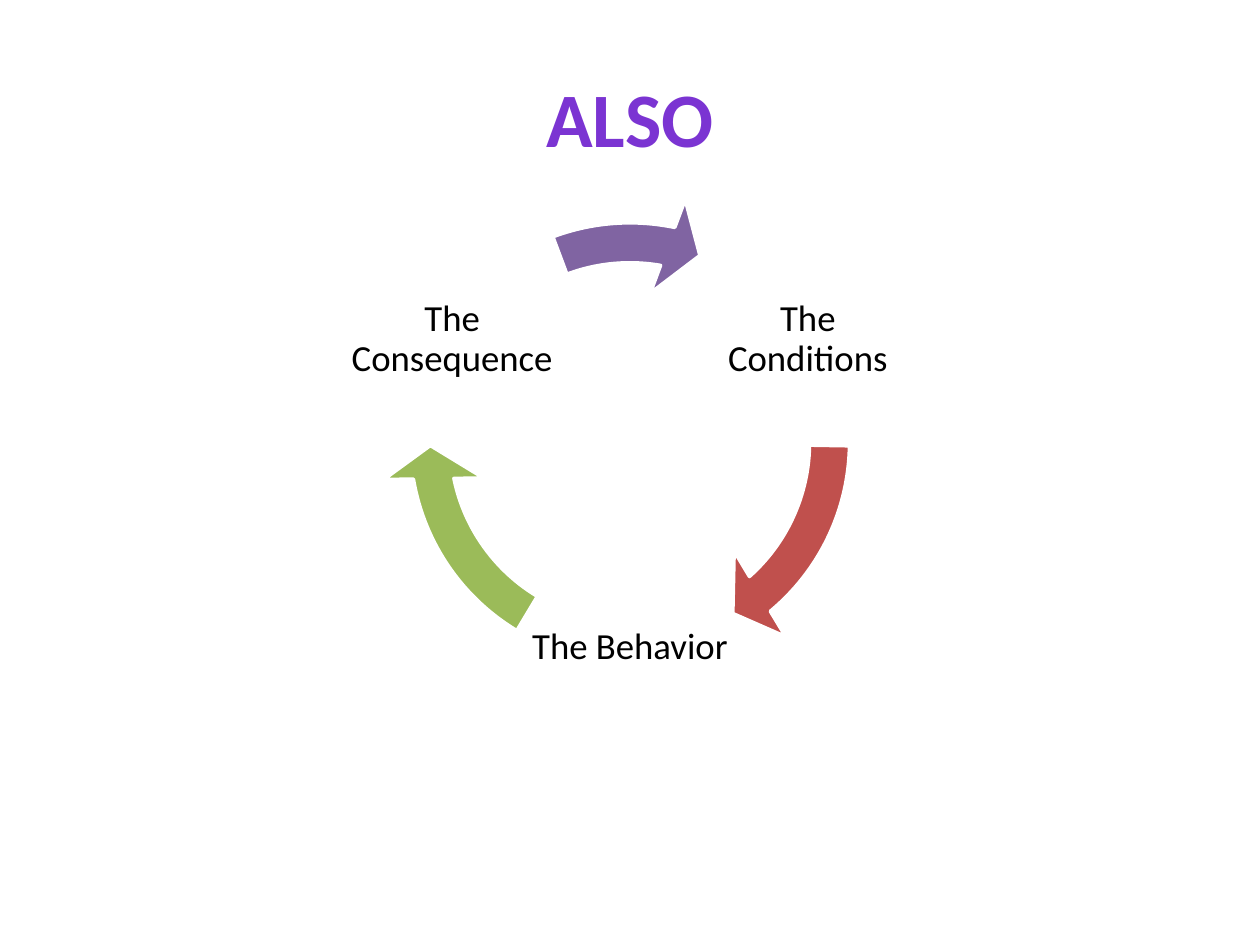
from math import cos, radians, sin

from pptx import Presentation
from pptx.dml.color import RGBColor
from pptx.enum.shapes import MSO_SHAPE
from pptx.enum.text import MSO_ANCHOR, PP_ALIGN
from pptx.util import Cm, Pt


def color(hex_string):
    return RGBColor.from_string(hex_string)


class CycleSlide:
    """Holds the style and the current slide; lengths are in centimetres."""

    FONT = "Calibri"
    CENTER = (12.7, 8.92)
    RING_SIZE = 10.06
    LABEL_SIZE = 4.27
    LABEL_RADIUS = 4.14
    MARGIN = 0.08

    def __init__(self, presentation):
        self.slide = presentation.slides.add_slide(presentation.slide_layouts[5])

    def set_text(self, text_frame, text, hex_string, **font_format):
        text_frame.word_wrap = True
        text_frame.vertical_anchor = MSO_ANCHOR.MIDDLE
        paragraph = text_frame.paragraphs[0]
        paragraph.alignment = PP_ALIGN.CENTER
        run = paragraph.add_run()
        run.text = text
        for name, value in {"name": self.FONT, **font_format}.items():
            setattr(run.font, name, value)
        run.font.color.rgb = color(hex_string)
        return paragraph

    def title(self, text):
        shape = self.slide.shapes.title
        box = {"left": 1.27, "top": 0.76, "width": 22.86, "height": 3.18}
        for name, value in box.items():
            setattr(shape, name, Cm(value))
        self.set_text(shape.text_frame, text, "7B34D2", size=Pt(44), bold=True)

    def square(self, center_x, center_y, size):
        return Cm(center_x - size / 2), Cm(center_y - size / 2), Cm(size), Cm(size)

    def label(self, text, angle):
        center_x = self.CENTER[0] + self.LABEL_RADIUS * cos(radians(angle))
        center_y = self.CENTER[1] + self.LABEL_RADIUS * sin(radians(angle))
        shape = self.slide.shapes.add_textbox(
            *self.square(center_x, center_y, self.LABEL_SIZE))
        for side in ("left", "top", "right", "bottom"):
            setattr(shape.text_frame, f"margin_{side}", Cm(self.MARGIN))
        paragraph = self.set_text(shape.text_frame, text, "000000", size=Pt(21))
        paragraph.line_spacing = 0.9

    def arrow(self, hex_string, head, tail):
        shape = self.slide.shapes.add_shape(
            MSO_SHAPE.CIRCULAR_ARROW, *self.square(*self.CENTER, self.RING_SIZE))
        # Band thickness, head sweep, head end, tail start, head half-width
        for index, value in enumerate((0.08, 5.76, head, tail, 0.1)):
            shape.adjustments[index] = value
        shape.shadow.inherit = False
        shape.fill.solid()
        shape.fill.fore_color.rgb = color(hex_string)
        shape.line.color.rgb = color("FFFFFF")
        shape.line.width = Pt(2)


def main():
    presentation = Presentation()
    presentation.slide_width, presentation.slide_height = Cm(25.4), Cm(19.05)
    cycle = CycleSlide(presentation)
    cycle.title("ALSO")

    # Each step: label, its angle on the ring, colour, head and tail of its arrow
    steps = [
        ("The Conditions", -30, "C0504D", 29.62, 0.53),
        ("The Behavior", 90, "9BBB59", 101.71, 72.61),
        ("The Consequence", 210, "8064A2", 168.55, 149.68),
    ]
    for text, angle, hex_string, head, tail in steps:
        cycle.label(text, angle)
        cycle.arrow(hex_string, head, tail)

    presentation.save("out.pptx")


if __name__ == "__main__":
    main()
